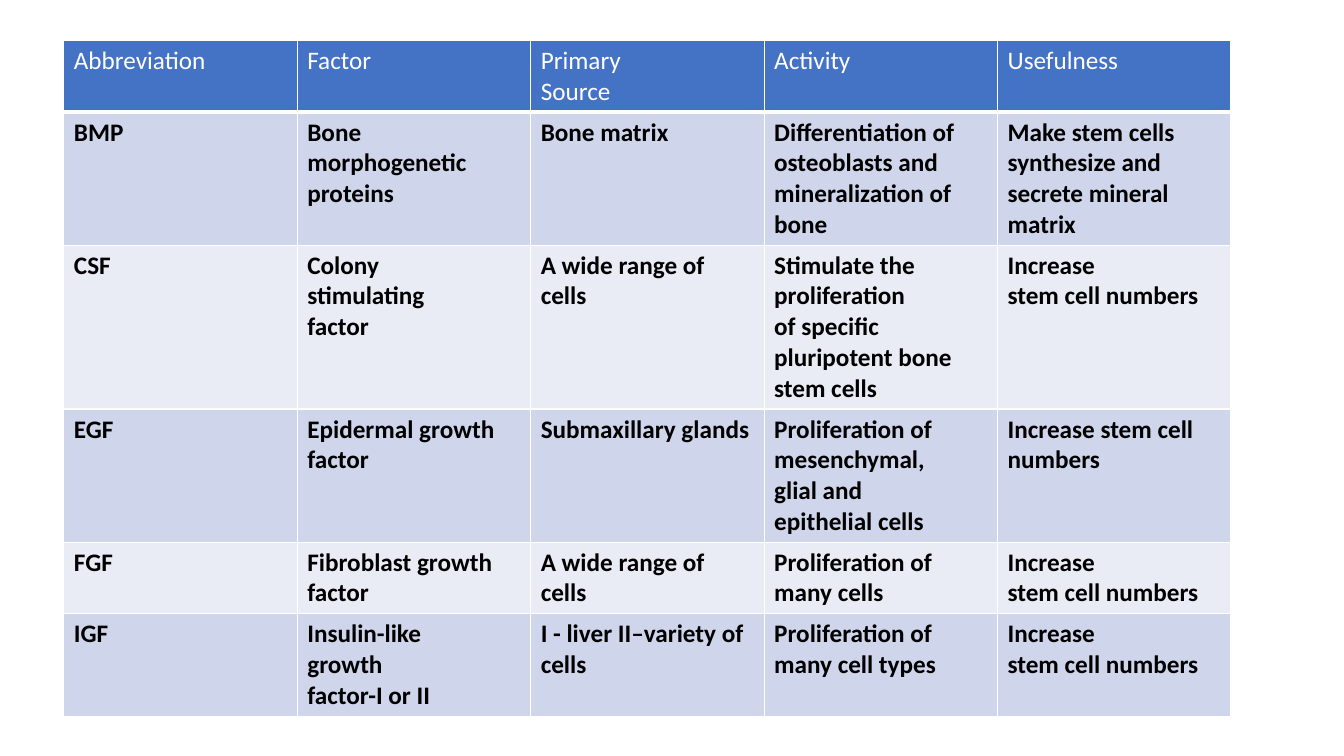
from lxml import etree
from pptx import Presentation
from pptx import util as u
from pptx.dml.color import RGBColor
from pptx.oxml import ns

COLORS = {
    "header": "4472C4",
    "band_dark": "CFD5EA",
    "band_light": "E9EBF5",
    "grid": "FFFFFF",
    "header_text": "FFFFFF",
    "body_text": "000000",
}

# Each line of a cell is its own paragraph
GROWTH_FACTORS = [
    ["Abbreviation", "Factor", "Primary\nSource", "Activity", "Usefulness"],
    ["BMP", "Bone\nmorphogenetic\nproteins", "Bone matrix",
     "Differentiation of\nosteoblasts and\nmineralization of\nbone",
     "Make stem cells\nsynthesize and\nsecrete mineral matrix"],
    ["CSF", "Colony\nstimulating\nfactor", "A wide range of cells",
     "Stimulate the\nproliferation\nof specific\npluripotent bone\nstem cells",
     "Increase\nstem cell numbers"],
    ["EGF", "Epidermal growth\nfactor", "Submaxillary glands",
     "Proliferation of\nmesenchymal,\nglial and\nepithelial cells",
     "Increase stem cell\nnumbers"],
    ["FGF", "Fibroblast growth\nfactor", "A wide range of cells",
     "Proliferation of\nmany cells", "Increase\nstem cell numbers"],
    ["IGF", "Insulin-like\ngrowth\nfactor-I or II",
     "I - liver II–variety of\ncells",
     "Proliferation of\nmany cell types", "Increase\nstem cell numbers"],
]


def write(frame, content, *, font, size, color, bold=False):
    """Fill a text frame, one paragraph per line."""
    for index, line in enumerate(content.split("\n")):
        para = frame.add_paragraph() if index else frame.paragraphs[0]
        span = para.add_run()
        span.text = line
        span.font.name = font
        span.font.size = u.Pt(size)
        span.font.bold = bold
        span.font.color.rgb = RGBColor.from_string(COLORS[color])


class SlideBuilder:
    font = "Calibri"
    size = 18

    def __init__(self, slide):
        self.slide = slide

    def borders(self, cell, bottom):
        properties = cell._tc.get_or_add_tcPr()
        widths = {"lnL": 1, "lnR": 1, "lnT": 1, "lnB": bottom}
        # Border lines stand before the fill
        for position, (side, width) in enumerate(widths.items()):
            line = etree.Element(ns.qn("a:" + side), w=str(u.Pt(width)))
            fill = etree.SubElement(line, ns.qn("a:solidFill"))
            etree.SubElement(fill, ns.qn("a:srgbClr"), val=COLORS["grid"])
            properties.insert(position, line)

    def cell(self, cell, content, *, fill, color, bold, bottom):
        cell.fill.solid()
        cell.fill.fore_color.rgb = RGBColor.from_string(COLORS[fill])
        self.borders(cell, bottom)
        write(cell.text_frame, content, font=self.font, size=self.size,
              color=color, bold=bold)

    def table(self, rows, left, top, width, height, row_height):
        frame = self.slide.shapes.add_table(
            len(rows), len(rows[0]),
            u.Pt(left), u.Pt(top), u.Pt(width), u.Pt(height))
        table = frame.table
        for number, contents in enumerate(rows):
            # Rows grow from this minimum to fit their text
            table.rows[number].height = u.Pt(row_height)
            if number == 0:
                style = dict(fill="header", color="header_text",
                             bold=False, bottom=3)
            else:
                band = "band_dark" if number % 2 else "band_light"
                style = dict(fill=band, color="body_text",
                             bold=True, bottom=1)
            for column, content in enumerate(contents):
                self.cell(table.cell(number, column), content, **style)
        frame.height = u.Pt(height)


def main():
    deck = Presentation()
    deck.slide_width, deck.slide_height = u.Pt(960), u.Pt(540)

    # Blank layout: the table fills the slide
    builder = SlideBuilder(deck.slides.add_slide(deck.slide_layouts[6]))
    builder.table(GROWTH_FACTORS, left=45.6, top=28.8, width=833.75,
                  height=496.8, row_height=29.2)
    deck.save("out.pptx")


if __name__ == "__main__":
    main()
